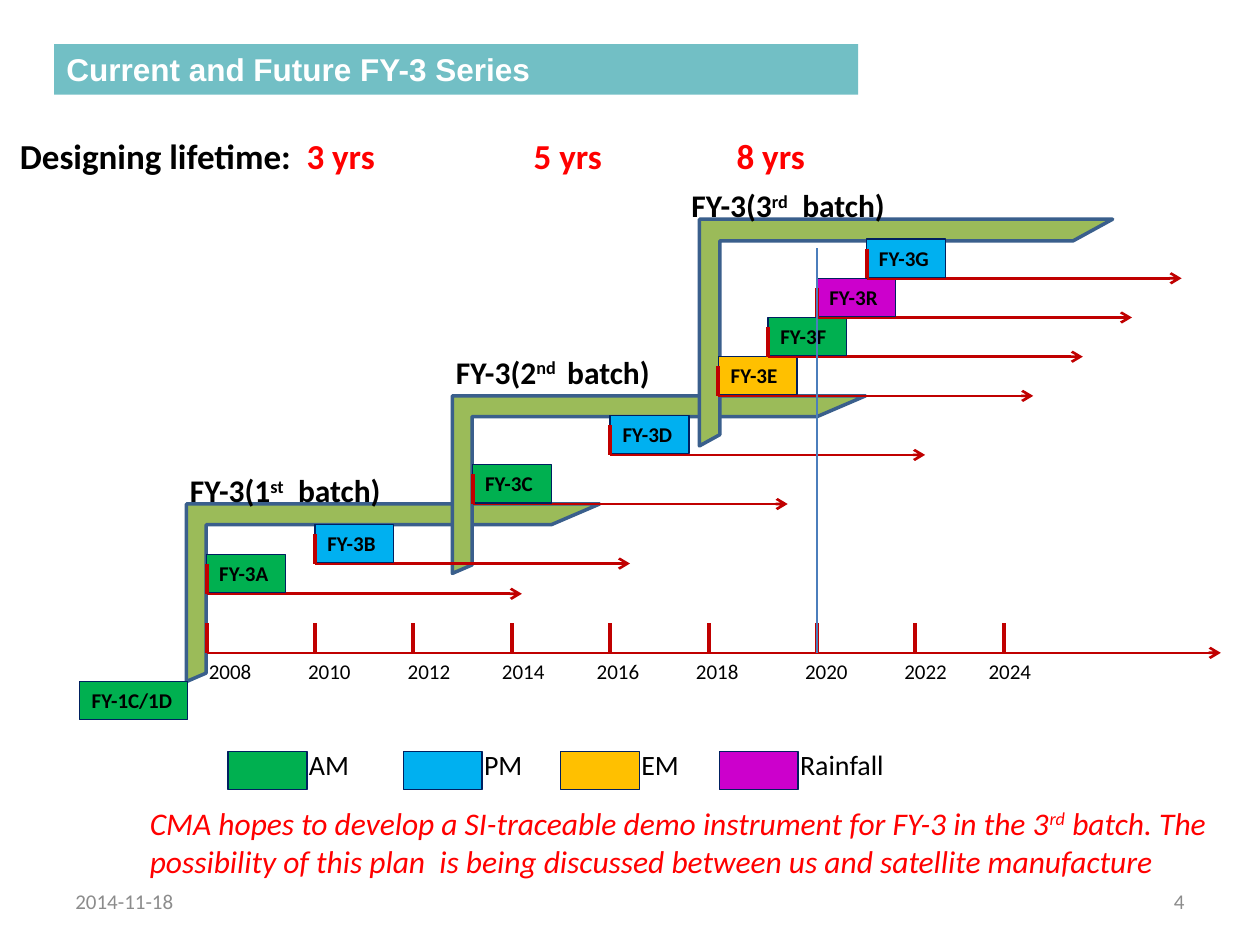
import pptx
import pptx.util
import pptx.dml.color
import pptx.enum.shapes
import pptx.enum.text
import pptx.oxml.ns
from lxml import etree

Cm = pptx.util.Cm
Pt = pptx.util.Pt
RGB = pptx.dml.color.RGBColor
Shape = pptx.enum.shapes.MSO_SHAPE
Align = pptx.enum.text.PP_ALIGN
Anchor = pptx.enum.text.MSO_ANCHOR
AutoSize = pptx.enum.text.MSO_AUTO_SIZE
qn = pptx.oxml.ns.qn

BLACK = RGB(0x00, 0x00, 0x00)
WHITE = RGB(0xFF, 0xFF, 0xFF)
RED = RGB(0xFF, 0x00, 0x00)
DARK_RED = RGB(0xC0, 0x00, 0x00)
GREY = RGB(0x8C, 0x8C, 0x8C)
TEAL = RGB(0x72, 0xBF, 0xC5)
OLIVE = RGB(0x9B, 0xBB, 0x59)
FRAME_BLUE = RGB(0x3A, 0x5F, 0x8C)
MARKER_BLUE = RGB(0x4B, 0x7E, 0xBC)
NAVY = RGB(0x00, 0x20, 0x60)
GREEN = RGB(0x00, 0xB0, 0x50)
BLUE = RGB(0x00, 0xB0, 0xF0)
AMBER = RGB(0xFF, 0xC0, 0x00)
PURPLE = RGB(0xCC, 0x00, 0xCC)

TITLE = "Current and Future FY-3 Series"
LIFETIME_HEADING = "Designing lifetime:"
LIFETIMES = ["3 yrs", "5 yrs", "8 yrs"]
LIFETIME_STOPS = [5.78, 10.36, 14.45]
CLOSING = ("CMA hopes to develop a SI-traceable demo instrument for FY-3 in the 3^rd^ batch. "
           "The possibility of this plan  is being discussed between us and satellite manufacture")
FRAMES = [
    (3.76, 10.16, 3.58, 0.117, 0.111),
    (9.12, 7.98, 3.58, 0.117, 0.111),
    (14.1, 4.42, 4.57, 0.096, 0.09),
]
BATCHES = [
    ("FY-3(1^st^  batch)", 3.58, 9.37, 5.36),
    ("FY-3(2^nd ^ batch)", 8.94, 6.99, 4.95),
    ("FY-3(3^rd^  batch)", 13.69, 3.63, 4.57),
]
SATELLITES = [
    ("FY-3A", GREEN, 4.17, 11.97),
    ("FY-3B", BLUE, 6.35, 11.36),
    ("FY-3C", GREEN, 9.53, 10.16),
    ("FY-3D", BLUE, 12.3, 9.17),
    ("FY-3E", AMBER, 14.48, 7.98),
    ("FY-3F", GREEN, 15.48, 7.19),
    ("FY-3R", PURPLE, 16.47, 6.4),
    ("FY-3G", BLUE, 17.47, 5.61),
]
YEARS = ["2008", "2010", "2012", "2014", "2016", "2018", "2020", "2022", "2024"]
YEAR_TICKS = [4.17, 6.35, 8.33, 10.32, 12.3, 14.29, 16.47, 18.45, 20.24]
YEAR_STOPS = [2, 4.01, 5.91, 7.82, 9.82, 12.02, 14.02, 15.72]
LEGEND = [
    ("AM", GREEN, 4.6, 1.6),
    ("PM", BLUE, 8.13, 1.6),
    ("EM", AMBER, 11.3, 1.6),
    ("Rainfall", PURPLE, 14.5, 2.6),
]

BOX_WIDTH, BOX_HEIGHT = 1.59, 0.77
TICK_HEIGHT = 0.6
MISSION_LENGTH = 6.35
AXIS_Y, AXIS_END = 13.16, 24.61

deck = pptx.Presentation()
deck.slide_width, deck.slide_height = Cm(25.4), Cm(19.05)
page = deck.slides.add_slide(deck.slide_layouts[6])


def add_spans(para, text, size, color=BLACK, bold=False, italic=False, font="Calibri"):
    for index, part in enumerate(text.split("^")):
        span = para.add_run()
        span.text = part
        span.font.name, span.font.size = font, Pt(size)
        span.font.bold, span.font.italic = bold, italic
        span.font.color.rgb = color
        if index % 2:
            span.font._element.set("baseline", "30000")


def fill_text(box, text, size, align=Align.LEFT, anchor=Anchor.TOP, grow=True, **style):
    frame = box.text_frame
    frame.word_wrap = True
    frame.auto_size = AutoSize.SHAPE_TO_FIT_TEXT if grow else AutoSize.NONE
    frame.vertical_anchor = anchor
    para = frame.paragraphs[0]
    para.alignment = align
    add_spans(para, text, size, **style)
    return para


def add_text(left, top, width, height, text, size, **style):
    box = page.shapes.add_textbox(Cm(left), Cm(top), Cm(width), Cm(height))
    return fill_text(box, text, size, **style)


def add_block(kind, left, top, width, height, fill, line=None, weight=0.75):
    block = page.shapes.add_shape(kind, Cm(left), Cm(top), Cm(width), Cm(height))
    block.shadow.inherit = False
    block.fill.solid()
    block.fill.fore_color.rgb = fill
    if line is None:
        block.line.fill.background()
    else:
        block.line.color.rgb = line
        block.line.width = Pt(weight)
    return block


def add_line(x1, y1, x2, y2, color=DARK_RED, weight=2.25, arrow=False):
    line = page.shapes.add_connector(pptx.enum.shapes.MSO_CONNECTOR.STRAIGHT,
                                     Cm(x1), Cm(y1), Cm(x2), Cm(y2))
    line.line.color.rgb = color
    line.line.width = Pt(weight)
    if arrow:
        etree.SubElement(line.line._get_or_add_ln(), qn("a:tailEnd"), type="arrow")
    etree.SubElement(line._element.spPr, qn("a:effectLst"))


def add_tabs(para, stops):
    tabs = etree.SubElement(para._p.get_or_add_pPr(), qn("a:tabLst"))
    for stop in stops:
        etree.SubElement(tabs, qn("a:tab"), pos=str(Cm(stop)), algn="l")


add_text(1.27, 17.65, 5.92, 1.02, "2014-11-18", 12, color=GREY, anchor=Anchor.MIDDLE, grow=False)
add_text(18.21, 17.65, 5.92, 1.02, "4", 12, color=GREY, align=Align.RIGHT,
         anchor=Anchor.MIDDLE, grow=False)

for left, top, height, bar, stem in FRAMES:
    frame = add_block(Shape.HALF_FRAME, left, top, 8.33, height, OLIVE, FRAME_BLUE, 2)
    frame.adjustments[0], frame.adjustments[1] = bar, stem

origin = add_block(Shape.RECTANGLE, 1.6, 13.74, 2.18, BOX_HEIGHT, GREEN, NAVY)
fill_text(origin, "FY-1C/1D", 12, bold=True)

add_line(YEAR_TICKS[0], AXIS_Y, AXIS_END, AXIS_Y, weight=1.5, arrow=True)
for x in YEAR_TICKS:
    add_line(x, AXIS_Y - TICK_HEIGHT, x, AXIS_Y)
years = add_text(3.96, AXIS_Y, 20.24, BOX_HEIGHT, "\t".join(YEARS), 12)
add_tabs(years, YEAR_STOPS)

for text, left, top, width in BATCHES:
    add_text(left, top, width, 1.02, text, 18, bold=True)

for name, color, x, y in SATELLITES:
    add_line(x, y, x + MISSION_LENGTH, y, weight=1.5, arrow=True)
    satellite = add_block(Shape.RECTANGLE, x, y - 0.79, BOX_WIDTH, BOX_HEIGHT, color, NAVY)
    fill_text(satellite, name, 12, bold=True)
    add_line(x, y - TICK_HEIGHT, x, y)
add_line(YEAR_TICKS[6], AXIS_Y, YEAR_TICKS[6], 5, MARKER_BLUE, 0.75)

for name, color, left, width in LEGEND:
    add_block(Shape.RECTANGLE, left, 15.15, BOX_WIDTH, BOX_HEIGHT, color, NAVY)
    add_text(left + 1.38, 14.94, width, 0.94, name, 16)

banner = add_block(Shape.RECTANGLE, 1.09, 0.89, 16.21, 1.02, TEAL)
fill_text(banner, TITLE, 18, color=WHITE, bold=True, font="Arial")

lifetime = add_text(0.15, 2.59, 22.28, 1.12, LIFETIME_HEADING, 20, bold=True)
for years_text in LIFETIMES:
    add_spans(lifetime, "\t" + years_text, 20, color=RED, bold=True)
add_tabs(lifetime, LIFETIME_STOPS)

add_text(2.77, 16.08, 22.23, 1.8, CLOSING, 18, color=RED, italic=True)

deck.save("out.pptx")
